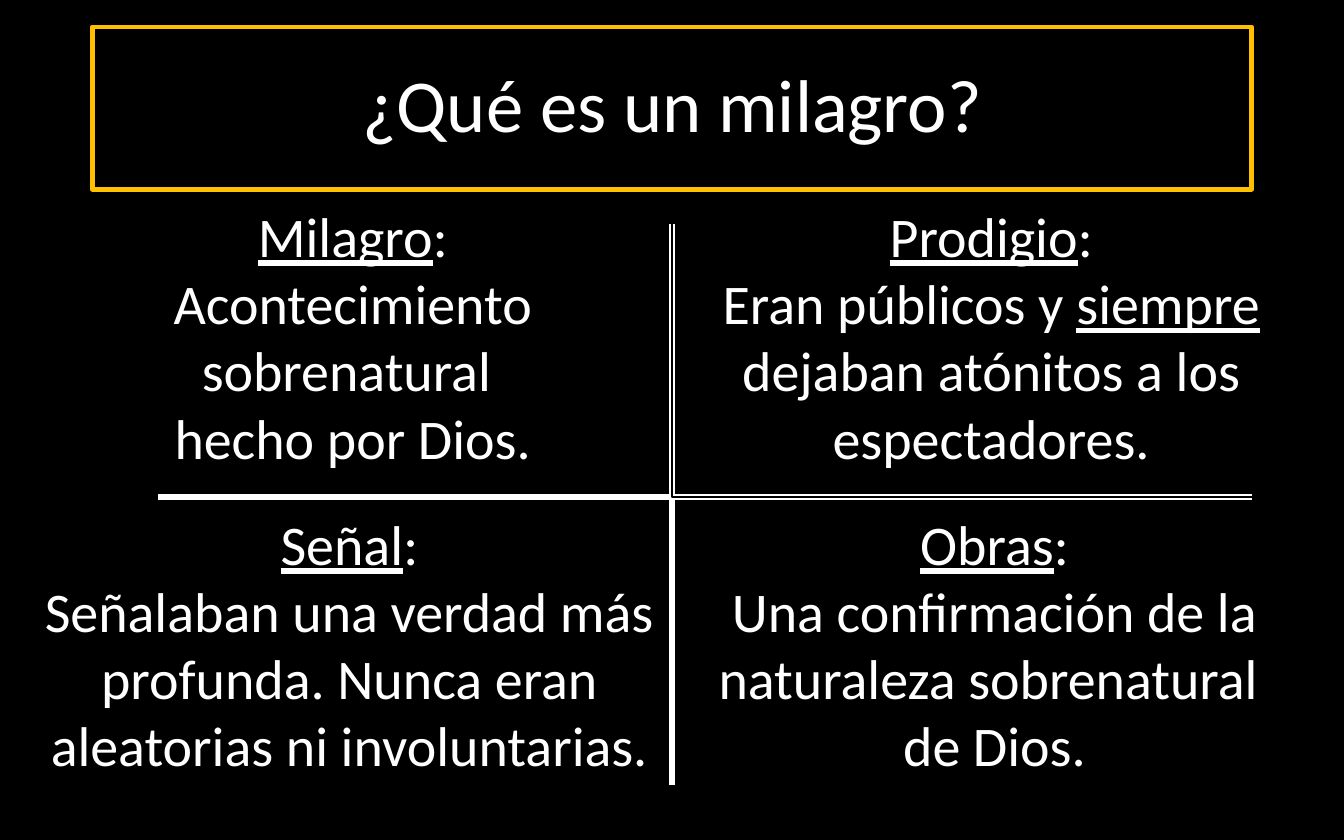
import pptx
import pptx.dml.color
import pptx.enum.shapes
import pptx.enum.text
import pptx.oxml.ns
import pptx.util
from pptx.util import Pt

BLACK = pptx.dml.color.RGBColor(0x00, 0x00, 0x00)
WHITE = pptx.dml.color.RGBColor(0xFF, 0xFF, 0xFF)
GOLD = pptx.dml.color.RGBColor(0xFF, 0xC0, 0x00)


def add_text(para, text, size=30, color=WHITE, font="Calibri", underline=False):
    """Append text to a paragraph, turning each newline into a line break."""
    for number, line in enumerate(text.split("\n")):
        if number:
            para.add_line_break()
        if line:
            span = para.add_run()
            span.text = line
            span.font.name = font
            span.font.size = Pt(size)
            span.font.color.rgb = color
            span.font.underline = underline


class SlideBuilder:
    def __init__(self, deck):
        self.page = deck.slides.add_slide(deck.slide_layouts[5])
        self.page.background.fill.solid()
        self.page.background.fill.fore_color.rgb = BLACK

    def outline(self, box, color, width):
        box.line.color.rgb = color
        box.line.width = Pt(width)

    def title(self, text, left, top, width, height):
        box = self.page.shapes.title
        box.left, box.top, box.width, box.height = map(Pt, (left, top, width, height))
        self.outline(box, GOLD, 2.5)
        box.text_frame.vertical_anchor = pptx.enum.text.MSO_ANCHOR.MIDDLE
        para = box.text_frame.paragraphs[0]
        para.alignment = pptx.enum.text.PP_ALIGN.CENTER
        para.line_spacing = 0.9
        add_text(para, text, size=40)

    def definition(self, term, parts, left, top, width, height):
        """Add a box with an underlined term, then (text, underline) parts."""
        box = self.page.shapes.add_textbox(Pt(left), Pt(top), Pt(width), Pt(height))
        self.outline(box, BLACK, 0.75)
        frame = box.text_frame
        frame.word_wrap = True
        frame.auto_size = pptx.enum.text.MSO_AUTO_SIZE.NONE
        frame.vertical_anchor = pptx.enum.text.MSO_ANCHOR.TOP
        frame.margin_left = frame.margin_right = Pt(5.76)
        frame.margin_top = frame.margin_bottom = Pt(2.88)
        para = frame.paragraphs[0]
        para.alignment = pptx.enum.text.PP_ALIGN.CENTER
        add_text(para, term, underline=True)
        add_text(para, ":\n")
        for text, underline in parts:
            add_text(para, text, underline=underline)

    def divider(self, x1, y1, x2, y2):
        line = self.page.shapes.add_connector(
            pptx.enum.shapes.MSO_CONNECTOR.STRAIGHT, Pt(x1), Pt(y1), Pt(x2), Pt(y2))
        self.outline(line, WHITE, 3)
        properties = line._element.spPr
        properties.append(properties.makeelement(pptx.oxml.ns.qn("a:effectLst"), {}))


def main():
    deck = pptx.Presentation()
    deck.slide_width, deck.slide_height = Pt(720), Pt(450)
    slide = SlideBuilder(deck)
    center, middle = 360, 266.4
    margin, height = 18, 161.3
    top, bottom = middle - height, 270
    upper_width, lower_width = 342, 338.4
    lower_right = 720 - margin - lower_width

    slide.title("¿Qué es un milagro?", 49.5, 14.4, 621, 87)
    slide.definition(
        "Milagro", [("Acontecimiento sobrenatural \nhecho por Dios.", False)],
        margin, top, upper_width, height)
    # The dividers lie between the boxes: later outlines cross over them.
    slide.divider(center, 120, center, 420.5)
    slide.divider(670.5, middle, 84.5, middle)
    slide.definition(
        "Prodigio",
        [("Eran públicos y ", False), ("siempre ", True),
         ("dejaban atónitos a los espectadores.", False)],
        center, top, upper_width, height)
    slide.definition(
        "Señal",
        [("Señalaban una verdad más profunda. Nunca eran aleatorias ni involuntarias.",
          False)],
        margin, bottom, lower_width, height)
    slide.definition(
        "Obras",
        [("Una confirmación de la naturaleza sobrenatural \nde Dios.", False)],
        lower_right, bottom, lower_width, height)
    deck.save("out.pptx")


if __name__ == "__main__":
    main()
